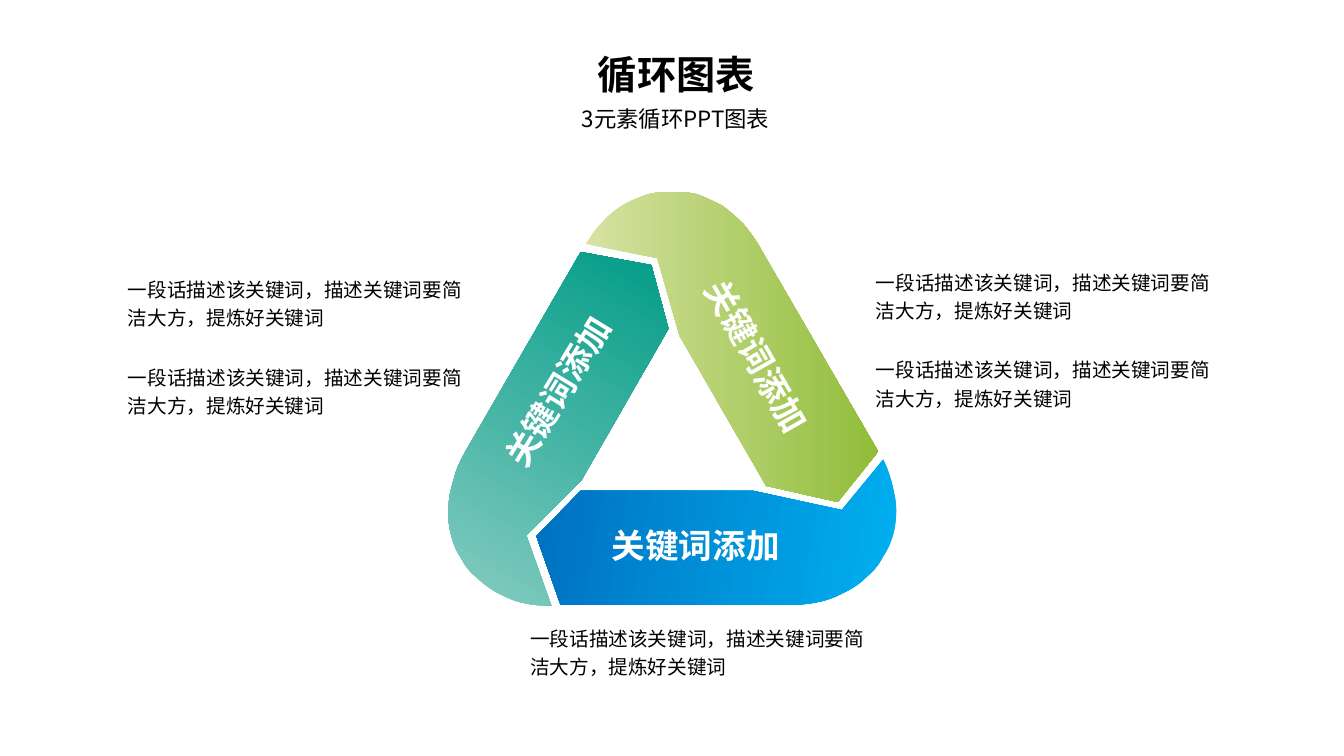
"""Build a slide with a three-part cycle diagram and keyword descriptions."""
from copy import deepcopy
from dataclasses import dataclass

from lxml import etree
from pptx import Presentation
from pptx.dml.color import RGBColor
from pptx.enum import text
from pptx.oxml import ns
from pptx.util import Inches, Pt


@dataclass(frozen=True)
class Theme:
    font: str = "Noto Sans CJK SC"
    ink: str = "000000"
    light: str = "FFFFFF"
    title: int = 28
    subtitle: int = 16
    label: int = 24
    body: int = 14
    blue: tuple = ((0, "00B0F0"), (100, "0070C0"))
    teal: tuple = ((0, "86CCC1"), (54, "3EB2A2"), (100, "009C87"))
    green: tuple = ((0, "D7E2A3"), (54, "B0CE69"), (100, "90BD39"))


THEME = Theme()
TITLE = "循环图表"
SUBTITLE = "3元素循环PPT图表"
KEYWORD = "关键词添加"
DESCRIPTION = "一段话描述该关键词，描述关键词要简洁大方，提炼好关键词"

LABELS = [(4.59, 3.63, 301.3), (6.57, 3.28, 60.3), (5.96, 5.16, 0)]
DESCRIPTIONS = [(1.17, 2.66), (1.17, 3.53), (8.59, 2.59), (8.59, 3.46), (5.16, 6.12)]

BLUE_ARROW = [
    (8.76, 4.56),
    (8.8, 4.64, 8.83, 4.73, 8.85, 4.81), (8.87, 4.89, 8.89, 4.98, 8.89, 5.06),
    (8.89, 5.14, 8.88, 5.22, 8.86, 5.3), (8.84, 5.37, 8.81, 5.45, 8.76, 5.52),
    (8.72, 5.6, 8.67, 5.66, 8.6, 5.72), (8.54, 5.78, 8.47, 5.83, 8.39, 5.87),
    (8.31, 5.91, 8.23, 5.95, 8.13, 5.97), (8.04, 5.99, 7.94, 6, 7.84, 6),
    (5.56, 6), (5.32, 5.32), (5.76, 4.87), (7.47, 4.87), (8.35, 5.06),
]
TEAL_ARROW = [
    (5.76, 2.5), (6.46, 2.63), (6.63, 3.26), (5.77, 4.76), (5.22, 5.31), (5.47, 6.01),
    (5.37, 6.01, 5.27, 6, 5.18, 5.98), (5.09, 5.96, 5.01, 5.92, 4.93, 5.88),
    (4.86, 5.84, 4.79, 5.79, 4.73, 5.73), (4.66, 5.68, 4.61, 5.61, 4.57, 5.53),
    (4.52, 5.46, 4.49, 5.38, 4.47, 5.29), (4.45, 5.21, 4.44, 5.12, 4.45, 5.03),
    (4.45, 4.94, 4.47, 4.85, 4.5, 4.76), (4.52, 4.67, 4.56, 4.58, 4.61, 4.49),
]
GREEN_ARROW = [
    (6.66, 1.9),
    (6.75, 1.9, 6.84, 1.91, 6.92, 1.93), (7, 1.96, 7.08, 2, 7.16, 2.04),
    (7.23, 2.09, 7.3, 2.15, 7.37, 2.22), (7.43, 2.29, 7.49, 2.37, 7.54, 2.46),
    (8.71, 4.48), (8.31, 4.98), (7.6, 4.82), (6.74, 3.33), (6.52, 2.56), (5.81, 2.42),
    (5.86, 2.34, 5.92, 2.26, 5.98, 2.2), (6.04, 2.13, 6.11, 2.08, 6.19, 2.03),
    (6.26, 1.99, 6.34, 1.96, 6.42, 1.93), (6.5, 1.91, 6.58, 1.9, 6.66, 1.9),
]
ARROWS = [(BLUE_ARROW, THEME.blue, 190), (TEAL_ARROW, THEME.teal, 300),
          (GREEN_ARROW, THEME.green, 0)]


def place(sp, left, top, width, height):
    sp.left, sp.top = Inches(left), Inches(top)
    sp.width, sp.height = Inches(width), Inches(height)


def write(sp, content, size, color=THEME.ink, bold=False, align=text.PP_ALIGN.LEFT,
          wrap=True, spacing=1.0):
    tf = sp.text_frame
    tf.auto_size = text.MSO_AUTO_SIZE.SHAPE_TO_FIT_TEXT
    tf.word_wrap, tf.vertical_anchor = wrap, text.MSO_ANCHOR.TOP
    p = tf.paragraphs[0]
    p.alignment, p.line_spacing, p.space_before = align, spacing, Pt(0)
    r = p.add_run()
    r.text = content
    r.font.name, r.font.size, r.font.bold = THEME.font, Pt(size), bold
    r.font.color.rgb = RGBColor.from_string(color)
    etree.SubElement(r.font._element, ns.qn("a:ea"), typeface=THEME.font)


def bend(sp, segments):
    lines = sp._element.xpath(".//a:lnTo")
    for line, segment in zip(lines, segments):
        if len(segment) == 2:
            continue
        curve = etree.Element(ns.qn("a:cubicBezTo"))
        for x, y in zip(segment[::2], segment[1::2]):
            etree.SubElement(curve, ns.qn("a:pt"), x=str(Inches(x) - sp.left),
                             y=str(Inches(y) - sp.top))
        line.getparent().replace(line, curve)


def add_arrow(shapes, segments, colors, angle):
    start, *rest = [(Inches(seg[-2]), Inches(seg[-1])) for seg in segments]
    builder = shapes.build_freeform(*start)
    builder.add_line_segments(rest, close=True)
    sp = builder.convert_to_shape()
    bend(sp, segments[1:])
    sp.shadow.inherit = False
    sp.line.fill.background()
    sp.fill.gradient()
    sp.fill.gradient_angle = -angle % 360
    stops = sp._element.xpath(".//a:gsLst")[0]
    while len(stops) < len(colors):
        stops.append(deepcopy(stops[-1]))
    for stop, (position, color) in zip(sp.fill.gradient_stops, colors):
        stop.position = position / 100
        stop.color.rgb = RGBColor.from_string(color)


def main():
    prs = Presentation()
    prs.slide_width, prs.slide_height = Inches(13.33), Inches(7.5)
    s = prs.slides.add_slide(prs.slide_layouts[0])
    title, subtitle = s.placeholders
    place(title, 5.83, 0.45, 1.77, 0.57)
    write(title, TITLE, THEME.title, bold=True, wrap=False)
    place(subtitle, 5.67, 0.99, 2.08, 0.37)
    write(subtitle, SUBTITLE, THEME.subtitle)

    for segments, colors, angle in ARROWS:
        add_arrow(s.shapes, segments, colors, angle)
    for left, top, rotation in LABELS:
        sp = s.shapes.add_textbox(Inches(left), Inches(top), Inches(1.88), Inches(0.5))
        sp.rotation = rotation
        write(sp, KEYWORD, THEME.label, THEME.light, bold=True, wrap=False,
              align=text.PP_ALIGN.CENTER)
    for left, top in DESCRIPTIONS:
        sp = s.shapes.add_textbox(Inches(left), Inches(top), Inches(3.66), Inches(0.64))
        write(sp, DESCRIPTION, THEME.body, spacing=1.2)
    prs.save("out.pptx")


if __name__ == "__main__":
    main()
